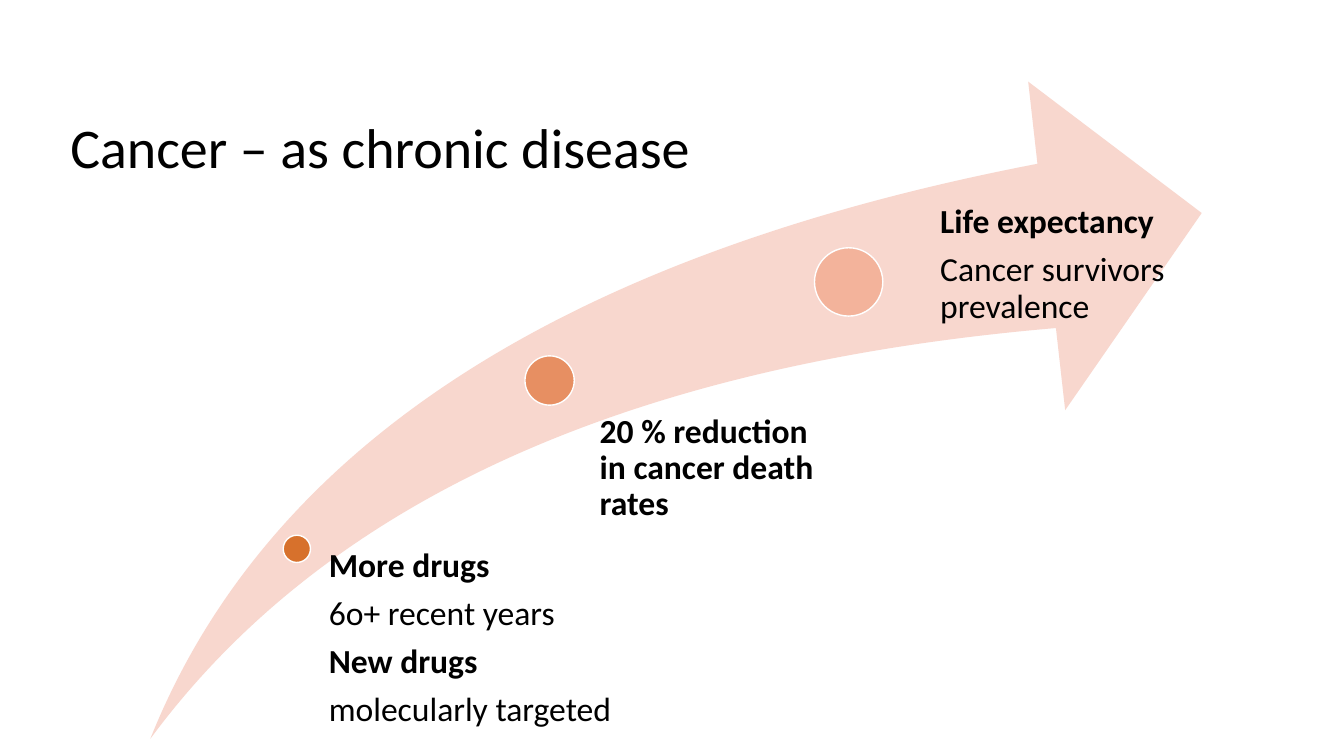
from dataclasses import dataclass

import pptx
import pptx.dml.color
import pptx.enum.shapes
import pptx.enum.text
import pptx.presentation
import pptx.shapes.autoshape
import pptx.slide
import pptx.util

Pt = pptx.util.Pt
MSO_SHAPE = pptx.enum.shapes.MSO_SHAPE

Box = tuple[float, float, float, float]
Line = tuple[str, bool]


@dataclass(frozen=True)
class Milestone:
    dot_left: float
    dot_top: float
    dot_size: float
    color: str
    text_box: Box
    text_inset: float
    lines: tuple[Line, ...]


MILESTONES = (
    Milestone(202.3, 382.3, 19.5, "D7712C", (224.6, 391.7, 280.8, 135.4), 10.3,
              (("More drugs", True), ("6o+ recent years", False),
               ("New drugs", True), ("molecularly targeted", False))),
    Milestone(375, 254.2, 35.2, "E78F62", (409.7, 295.9, 180, 107.3), 18.7,
              (("20 % reduction in cancer death rates", True),)),
    Milestone(581.8, 177, 48.8, "F3B39B", (645.8, 146.2, 254.9, 185.8), 25.8,
              (("Life expectancy", True), ("Cancer survivors prevalence", False))),
)


def color(value: str) -> pptx.dml.color.RGBColor:
    return pptx.dml.color.RGBColor.from_string(value)


def add_filled_shape(slide: pptx.slide.Slide, kind: MSO_SHAPE, box: Box, fill: str,
                     outline: str | None = None) -> pptx.shapes.autoshape.Shape:
    shape = slide.shapes.add_shape(kind, *map(Pt, box))
    shape.shadow.inherit = False
    shape.fill.solid()
    shape.fill.fore_color.rgb = color(fill)
    if outline:
        shape.line.color.rgb = color(outline)
        shape.line.width = Pt(1)
    else:
        shape.line.fill.background()
    return shape


def add_text(slide: pptx.slide.Slide, box: Box, lines: tuple[Line, ...], *, size: float,
             insets: Box = (7.2, 3.6, 7.2, 3.6), line_spacing: float = 1,
             space_after: float = 0) -> None:
    frame = slide.shapes.add_textbox(*map(Pt, box)).text_frame
    frame.word_wrap = True
    frame.vertical_anchor = pptx.enum.text.MSO_ANCHOR.TOP
    frame.margin_left, frame.margin_top, frame.margin_right, frame.margin_bottom = map(Pt, insets)
    for index, (text, bold) in enumerate(lines):
        paragraph = frame.add_paragraph() if index else frame.paragraphs[0]
        paragraph.line_spacing = line_spacing
        paragraph.space_after = Pt(space_after)
        run = paragraph.add_run()
        run.text = text
        run.font.name = "Calibri"
        run.font.size = Pt(size)
        run.font.bold = bold
        run.font.color.rgb = color("000000")


def add_milestone(slide: pptx.slide.Slide, milestone: Milestone) -> None:
    dot = (milestone.dot_left, milestone.dot_top, milestone.dot_size, milestone.dot_size)
    add_filled_shape(slide, MSO_SHAPE.OVAL, dot, milestone.color, "FFFFFF")
    add_text(slide, milestone.text_box, milestone.lines, size=24,
             insets=(milestone.text_inset, 0, 0, 0), line_spacing=0.9, space_after=8.4)


def main() -> None:
    presentation = pptx.Presentation()
    presentation.slide_width, presentation.slide_height = Pt(960), Pt(540)
    slide = presentation.slides.add_slide(presentation.slide_layouts[6])
    arrow = add_filled_shape(slide, MSO_SHAPE.SWOOSH_ARROW, (107.4, 58.3, 751, 469.4), "F8D7CE")
    arrow.adjustments[0] = arrow.adjustments[1] = 0.25
    for milestone in MILESTONES:
        add_milestone(slide, milestone)
    add_text(slide, (43.2, 77, 496.8, 55.4), (("Cancer – as chronic disease", False),), size=40)
    presentation.save("out.pptx")


if __name__ == "__main__":
    main()
